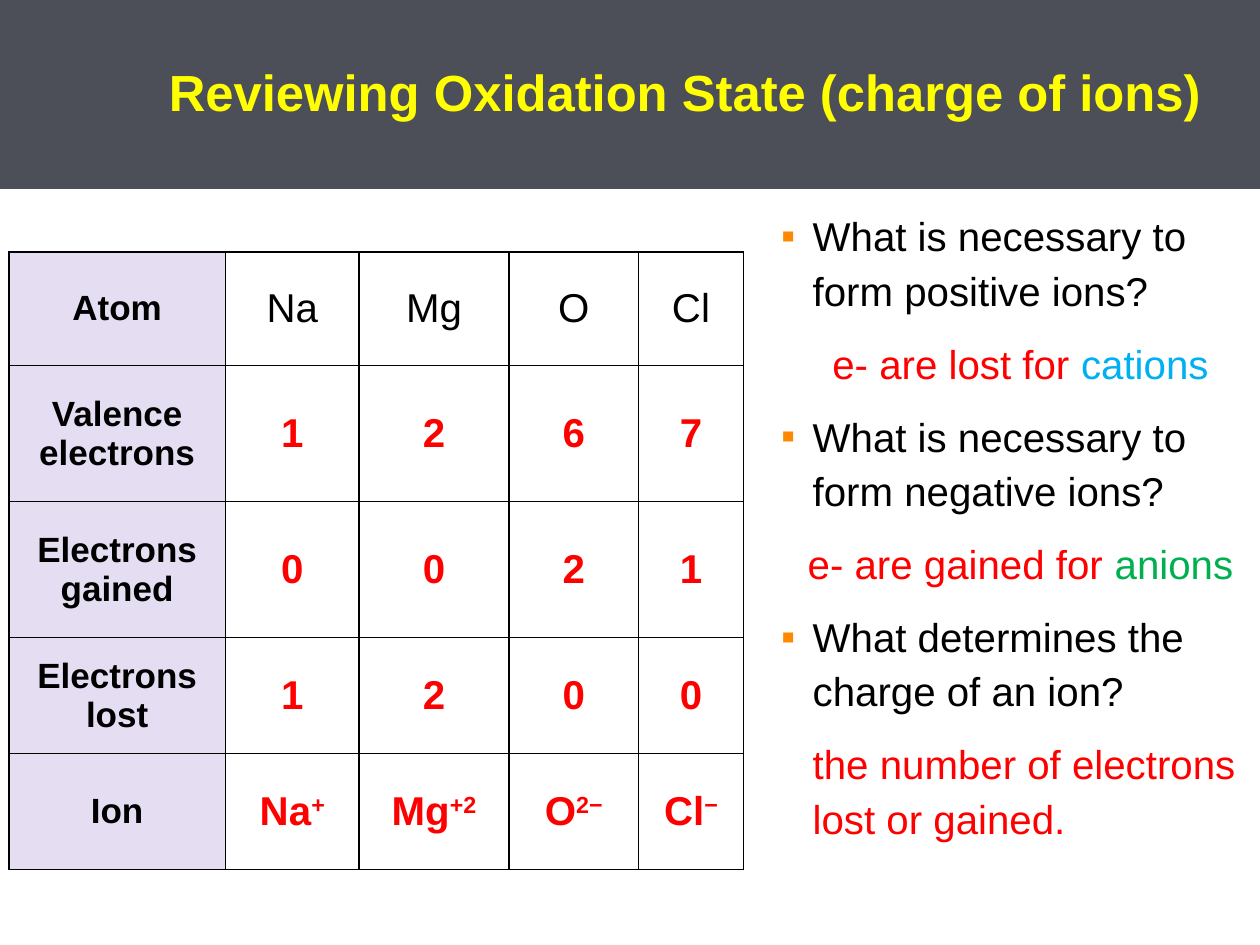
from lxml import etree
from pptx import Presentation
from pptx.dml.color import RGBColor
from pptx.enum.text import MSO_ANCHOR, MSO_AUTO_SIZE, PP_ALIGN
from pptx.oxml.ns import qn
from pptx.util import Inches, Pt

CENTER, LEFT = PP_ALIGN.CENTER, PP_ALIGN.LEFT
MIDDLE, TOP = MSO_ANCHOR.MIDDLE, MSO_ANCHOR.TOP
NO_AUTOFIT = MSO_AUTO_SIZE.NONE

FONT = "Arial"
COLORS = {
    "band": "4D4F58", "title": "FFFF00", "text": "000000", "answer": "FF0000",
    "cation": "00B0F0", "anion": "00B050", "bullet": "FE8900",
    "header": "E5DEF2", "border": "000000",
}

COLUMN_WIDTHS = [1.72, 1.06, 1.19, 1.03, 0.83]
ROW_HEIGHTS = [0.9, 1.08, 1.08, 0.92, 0.92]
# An ion is a symbol and its charge
ION_TABLE = [
    ["Atom", "Na", "Mg", "O", "Cl"],
    ["Valence electrons", "1", "2", "6", "7"],
    ["Electrons gained", "0", "0", "2", "1"],
    ["Electrons lost", "1", "2", "0", "0"],
    ["Ion", ("Na", "+"), ("Mg", "+2"), ("O", "2−"), ("Cl", "−")],
]

# Each paragraph: its runs as (text, color), then its format
QUESTION = {"margin": 0.25, "indent": -0.25, "bullet": "▪"}
QUESTIONS = [
    ([("What is necessary to form positive ions?", "text")], QUESTION),
    ([("e- are lost for ", "answer"), ("cations", "cation")], {"align": CENTER}),
    ([("What is necessary to form negative ions?", "text")], QUESTION),
    ([("e- are gained for ", "answer"), ("anions", "anion")], {"align": CENTER}),
    ([("What determines the charge of an ion?", "text")], QUESTION),
    ([("the number of electrons lost or gained.", "answer")], {"margin": 0.25}),
]


def rgb(name):
    return RGBColor.from_string(COLORS[name])


def add_text(paragraph, text, size=23, color="text", bold=False, superscript=False):
    run = paragraph.add_run()
    run.text = text
    run.font.name = FONT
    run.font.size = Pt(size)
    run.font.bold = bold
    run.font.color.rgb = rgb(color)
    if superscript:
        run._r.get_or_add_rPr().set("baseline", "30000")


def format_paragraph(paragraph, align=LEFT, margin=0, indent=0, bullet=None,
                     line_spacing=1.0, space_before=0):
    properties = paragraph._p.get_or_add_pPr()
    properties.set("marL", str(Inches(margin)))
    properties.set("indent", str(Inches(indent)))
    paragraph.alignment = align
    paragraph.line_spacing = line_spacing
    paragraph.space_before = Pt(space_before)
    if bullet:
        color = etree.SubElement(properties, qn("a:buClr"))
        etree.SubElement(color, qn("a:srgbClr"), val=COLORS["bullet"])
        etree.SubElement(properties, qn("a:buFont"), typeface=FONT)
        etree.SubElement(properties, qn("a:buChar"), char=bullet)
    else:
        etree.SubElement(properties, qn("a:buNone"))


def place(shape, box, insets, anchor):
    shape.left, shape.top, shape.width, shape.height = map(Inches, box)
    frame = shape.text_frame
    frame.word_wrap = True
    frame.auto_size = NO_AUTOFIT
    frame.vertical_anchor = anchor
    (frame.margin_left, frame.margin_top,
     frame.margin_right, frame.margin_bottom) = map(Inches, insets)
    return frame


def fill_title(title, box):
    frame = place(title, box, (0.36, 0.15, 0.36, 0.15), MIDDLE)
    title.fill.solid()
    title.fill.fore_color.rgb = rgb("band")
    paragraph = frame.paragraphs[0]
    format_paragraph(paragraph, margin=0.98, line_spacing=0.95)
    add_text(paragraph, "Reviewing Oxidation State (charge of ions)",
             size=29, color="title", bold=True)


def fill_questions(body, box):
    frame = place(body, box, (0.2, 0.1, 0, 0.21), TOP)
    for index, (runs, style) in enumerate(QUESTIONS):
        paragraph = frame.add_paragraph() if index else frame.paragraphs[0]
        format_paragraph(paragraph, line_spacing=1.13,
                         space_before=10.5 if index else 0, **style)
        for text, color in runs:
            add_text(paragraph, text, color=color)


def add_borders(cell):
    properties = cell._tc.get_or_add_tcPr()
    for position, side in enumerate(("a:lnL", "a:lnR", "a:lnT", "a:lnB")):
        line = etree.Element(qn(side), w=str(Pt(1)))
        fill = etree.SubElement(line, qn("a:solidFill"))
        etree.SubElement(fill, qn("a:srgbClr"), val=COLORS["border"])
        properties.insert(position, line)


def fill_cell(cell, content, row, column):
    cell.vertical_anchor = MIDDLE
    cell.margin_left = cell.margin_right = Inches(0.19)
    cell.margin_top = cell.margin_bottom = Inches(0.07)
    paragraph = cell.text_frame.paragraphs[0]
    paragraph.alignment = CENTER
    if column == 0:
        cell.fill.solid()
        cell.fill.fore_color.rgb = rgb("header")
        style = {"size": 20, "bold": True}
    else:
        cell.fill.background()
        style = {"color": "answer", "bold": True} if row else {}
    symbol, charge = content if isinstance(content, tuple) else (content, None)
    add_text(paragraph, symbol, **style)
    if charge:
        add_text(paragraph, charge, superscript=True, **style)
    add_borders(cell)


def add_ion_table(slide, left, top):
    table = slide.shapes.add_table(
        len(ROW_HEIGHTS), len(COLUMN_WIDTHS), Inches(left), Inches(top),
        Inches(sum(COLUMN_WIDTHS)), Inches(sum(ROW_HEIGHTS))).table
    table.first_row = table.horz_banding = False
    for column, width in zip(table.columns, COLUMN_WIDTHS):
        column.width = Inches(width)
    for row, height in zip(table.rows, ROW_HEIGHTS):
        row.height = Inches(height)
    for row, contents in enumerate(ION_TABLE):
        for column, content in enumerate(contents):
            fill_cell(table.cell(row, column), content, row, column)


def main():
    presentation = Presentation()
    presentation.slide_width, presentation.slide_height = Inches(10), Inches(7.5)
    slide = presentation.slides.add_slide(presentation.slide_layouts[1])
    # Title band, questions on the right, table on the left
    fill_title(slide.shapes.title, (0, 0, 10, 1.5))
    fill_questions(slide.placeholders[1], (6, 1.53, 4, 5.97))
    add_ion_table(slide, 0.07, 2)
    presentation.save("out.pptx")


if __name__ == "__main__":
    main()
